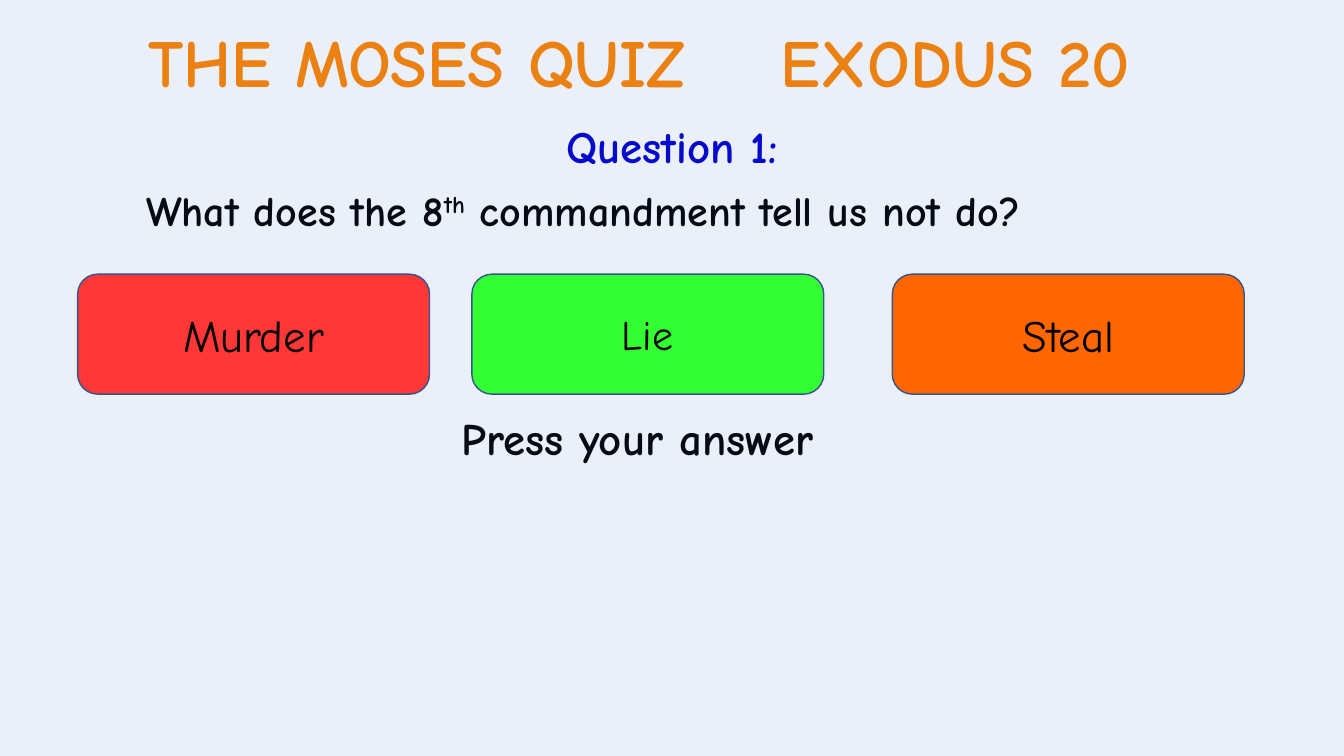
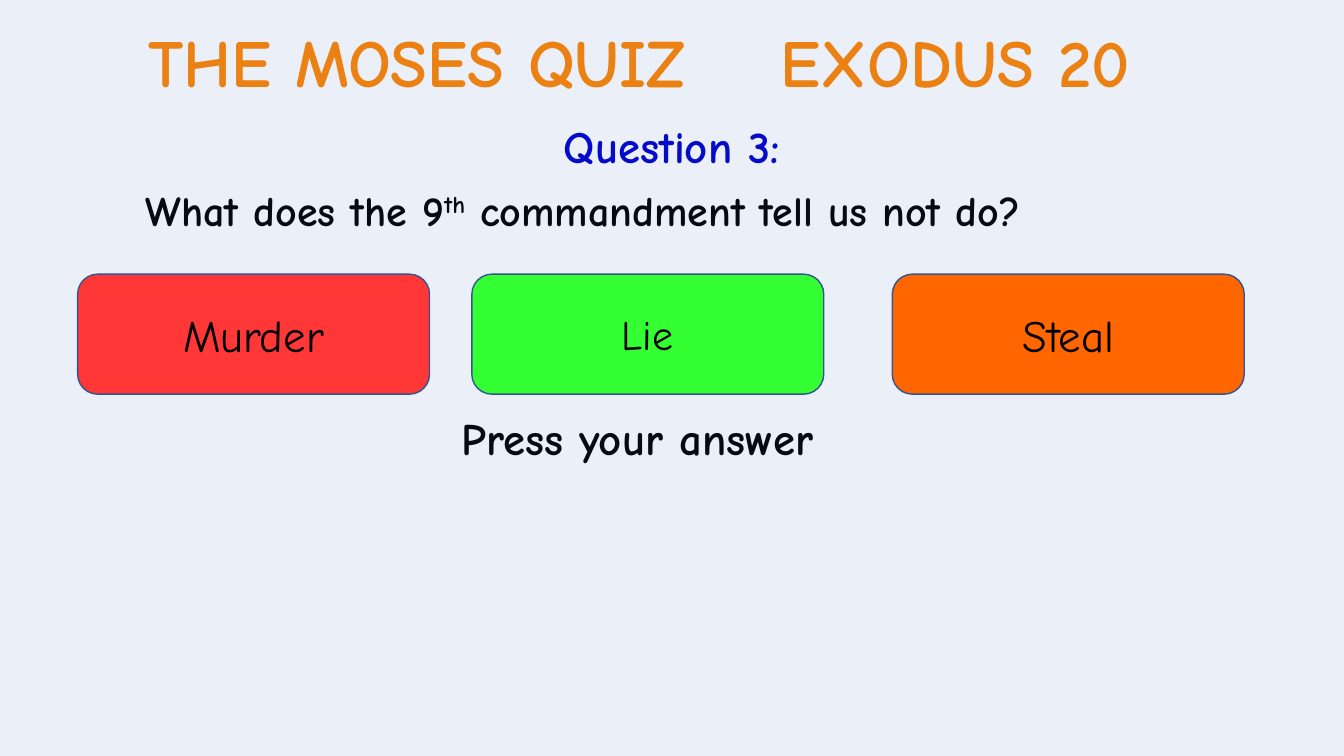
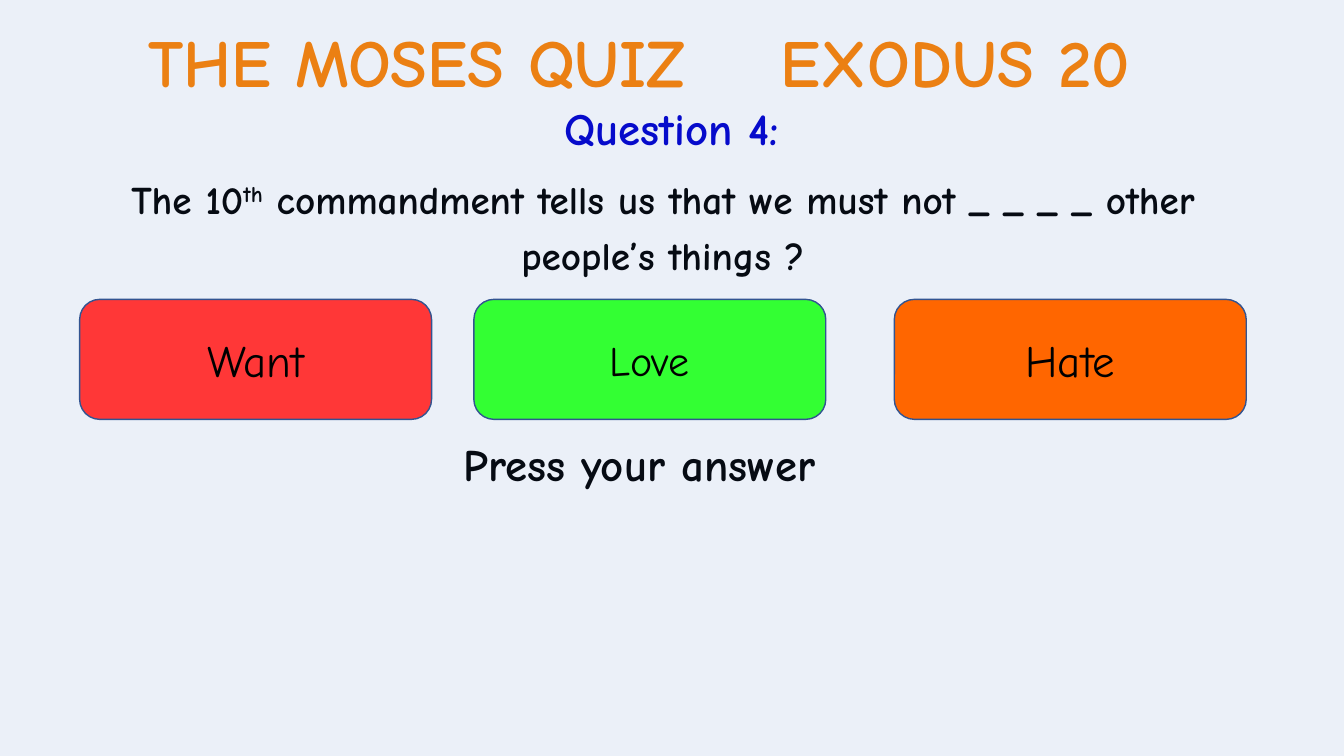
from dataclasses import dataclass

from lxml.etree import SubElement
from pptx import Presentation
from pptx.dml.color import RGBColor
from pptx.enum.shapes import MSO_SHAPE as Preset
from pptx.enum.text import MSO_ANCHOR as Anchor, MSO_AUTO_SIZE as AutoSize, PP_ALIGN as Align
from pptx.oxml.ns import qn
from pptx.util import Inches, Pt

FONT = "Comic Neue"
SLIDE_W, SLIDE_H = 13.33, 7.5
COLORS = {
    "title": "FF8200",
    "label": "0000CC",
    "text": "000000",
    "veil": "4472C4",
    "border": "325491",
    "red": "FF3737",
    "green": "33FF33",
    "orange": "FF6600",
}
TITLE_ONLY = 5
TITLE_TAB = 6.27
VEIL_OPACITY = 10  # percent
BUTTON_W, BUTTON_H = 3.49, 1.19
PROMPT_DX, PROMPT_DY = 3.71, 1.37


@dataclass(frozen=True)
class ButtonStyle:
    dx: float
    color: str
    size: int


BUTTONS = (
    ButtonStyle(0, "red", 32),
    ButtonStyle(3.91, "green", 30),
    ButtonStyle(8.08, "orange", 32),
)


@dataclass(frozen=True)
class Question:
    number: int
    before: str
    after: str
    answers: tuple[str, str, str]
    label_top: float = 1.13
    left: float = 0
    top: float = 1.86
    size: int = 30
    leading: int = 30
    answers_left: float = 0.77
    answers_top: float = 2.72


QUESTIONS = (
    Question(1, "What does the 8", " commandment tell us not do?", ("Murder", "Lie", "Steal")),
    Question(3, "What does the 9", " commandment tell us not do?", ("Murder", "Lie", "Steal")),
    Question(
        4,
        "The 10",
        " commandment tells us that we must not _ _ _ _ other people’s things ?",
        ("Want", "Love", "Hate"),
        label_top=0.95, left=0.79, top=1.6, size=28, leading=40,
        answers_left=0.79, answers_top=2.97,
    ),
)


def rgb(name: str) -> RGBColor:
    return RGBColor.from_string(COLORS[name])


def write(shape, *parts: str, size: int, color: str = "text", bold: bool = True,
          align=Align.CENTER, anchor=Anchor.TOP, leading=None, before: float = 0) -> None:
    """Fill a shape with one paragraph; every second part is superscript."""
    frame = shape.text_frame
    frame.word_wrap = True
    frame.auto_size = AutoSize.NONE
    frame.vertical_anchor = anchor
    paragraph = frame.paragraphs[0]
    paragraph.alignment = align
    paragraph.space_before = Pt(before)
    if leading is not None:
        paragraph.line_spacing = leading
    for index, part in enumerate(parts):
        run = paragraph.add_run()
        run.text = part
        run.font.name = FONT
        run.font.size = Pt(size)
        run.font.bold = bold
        run.font.color.rgb = rgb(color)
        if index % 2:
            run._r.get_or_add_rPr().set("baseline", "30000")


def add_text(slide, left: float, top: float, width: float, height: float,
             *parts: str, **text_format) -> None:
    box = slide.shapes.add_textbox(Inches(left), Inches(top), Inches(width), Inches(height))
    write(box, *parts, **text_format)


def add_panel(slide, preset, left: float, top: float, width: float, height: float, color: str):
    panel = slide.shapes.add_shape(preset, Inches(left), Inches(top), Inches(width), Inches(height))
    panel.shadow.inherit = False
    panel.fill.solid()
    panel.fill.fore_color.rgb = rgb(color)
    return panel


def set_title(slide) -> None:
    title = slide.shapes.title
    title.left, title.top = Inches(1.37), Inches(0.15)
    title.width, title.height = Inches(10.2), Inches(0.91)
    write(title, "THE MOSES QUIZ\tEXODUS 20", size=48, color="title", align=Align.LEFT)
    properties = title.text_frame.paragraphs[0]._p.get_or_add_pPr()
    tabs = SubElement(properties, qn("a:tabLst"))
    SubElement(tabs, qn("a:tab"), pos=str(Inches(TITLE_TAB)), algn="l")


def add_veil(slide) -> None:
    """Tint the whole slide with a translucent sheet."""
    veil = add_panel(slide, Preset.RECTANGLE, 0, 0, SLIDE_W, SLIDE_H, "veil")
    veil.line.fill.background()
    color = veil.fill._xPr.find(qn("a:solidFill"))[0]
    SubElement(color, qn("a:alpha"), val=str(VEIL_OPACITY * 1000))


def add_button(slide, question: Question, style: ButtonStyle, answer: str) -> None:
    button = add_panel(slide, Preset.ROUNDED_RECTANGLE, question.answers_left + style.dx,
                       question.answers_top, BUTTON_W, BUTTON_H, style.color)
    button.line.color.rgb = rgb("border")
    button.line.width = Pt(1)
    write(button, answer, size=style.size, bold=False, anchor=Anchor.MIDDLE)


def add_question_slide(deck, question: Question) -> None:
    slide = deck.slides.add_slide(deck.slide_layouts[TITLE_ONLY])
    set_title(slide)
    add_text(slide, question.left, question.top, 11.57, 1.19,
             question.before, "th", question.after,
             size=question.size, leading=Pt(question.leading), before=10)
    add_text(slide, question.answers_left + PROMPT_DX, question.answers_top + PROMPT_DY, 6.73, 0.72,
             "Press your answer", size=32, align=Align.LEFT, leading=0.9, before=7.5)
    add_text(slide, 4.46, question.label_top, 4.41, 0.64,
             f"Question {question.number}:", size=32, color="label")
    add_veil(slide)
    for style, answer in zip(BUTTONS, question.answers):
        add_button(slide, question, style, answer)


def main() -> None:
    deck = Presentation()
    deck.slide_width, deck.slide_height = Inches(SLIDE_W), Inches(SLIDE_H)
    for question in QUESTIONS:
        add_question_slide(deck, question)
    deck.save("out.pptx")


if __name__ == "__main__":
    main()
